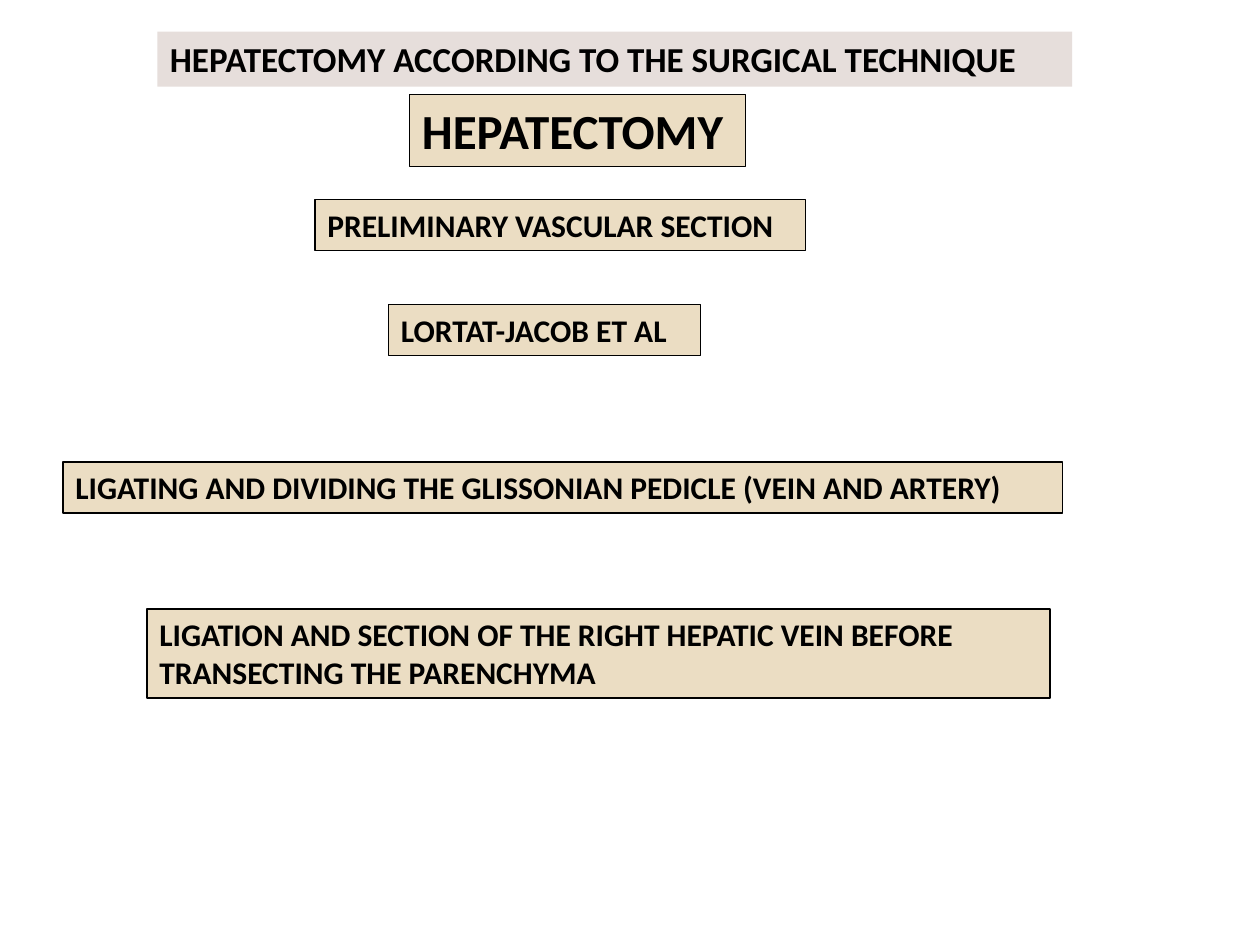
from pptx import Presentation
from pptx.dml.color import RGBColor
from pptx.enum.text import MSO_ANCHOR, PP_ALIGN
from pptx.enum.shapes import MSO_SHAPE
from pptx.util import Pt

COLORS = {"title": "E6DEDB", "step": "EBDDC3", "ink": "000000"}
INK = RGBColor.from_string(COLORS["ink"])

prs = Presentation()
prs.slide_width, prs.slide_height = Pt(720), Pt(540)
slide = prs.slides.add_slide(prs.slide_layouts[6])

# wording, left, top, width, height, text size, fill
steps = [
    ("HEPATECTOMY ACCORDING TO THE SURGICAL TECHNIQUE", 90, 18, 522.7, 31.5, 20, "title"),
    ("HEPATECTOMY", 234, 54, 192, 41.2, 28, "step"),
    ("PRELIMINARY VASCULAR SECTION", 180, 114, 280.5, 29.1, 18, "step"),
    ("LORTAT-JACOB ET AL", 222, 174, 178.5, 29.1, 18, "step"),
    ("LIGATING AND DIVIDING THE GLISSONIAN PEDICLE (VEIN AND ARTERY)",
     36, 264, 571, 29.1, 18, "step"),
    ("LIGATION AND SECTION OF THE RIGHT HEPATIC VEIN BEFORE TRANSECTING THE PARENCHYMA",
     84, 348, 516, 50.9, 18, "step"),
]

for wording, left, top, width, height, size, fill in steps:
    box = slide.shapes.add_shape(
        MSO_SHAPE.RECTANGLE, Pt(left), Pt(top), Pt(width), Pt(height))
    box.shadow.inherit = False
    box.fill.solid()
    box.fill.fore_color.rgb = RGBColor.from_string(COLORS[fill])
    if fill == "title":
        box.line.fill.background()
    else:
        box.line.color.rgb = INK
        box.line.width = Pt(0.75)

    frame = box.text_frame
    frame.word_wrap = True
    frame.vertical_anchor = MSO_ANCHOR.TOP
    paragraph = frame.paragraphs[0]
    paragraph.alignment = PP_ALIGN.LEFT
    run = paragraph.add_run()
    run.text = wording
    for attribute, value in {"name": "Calibri", "size": Pt(size), "bold": True}.items():
        setattr(run.font, attribute, value)
    run.font.color.rgb = INK

prs.save("out.pptx")
